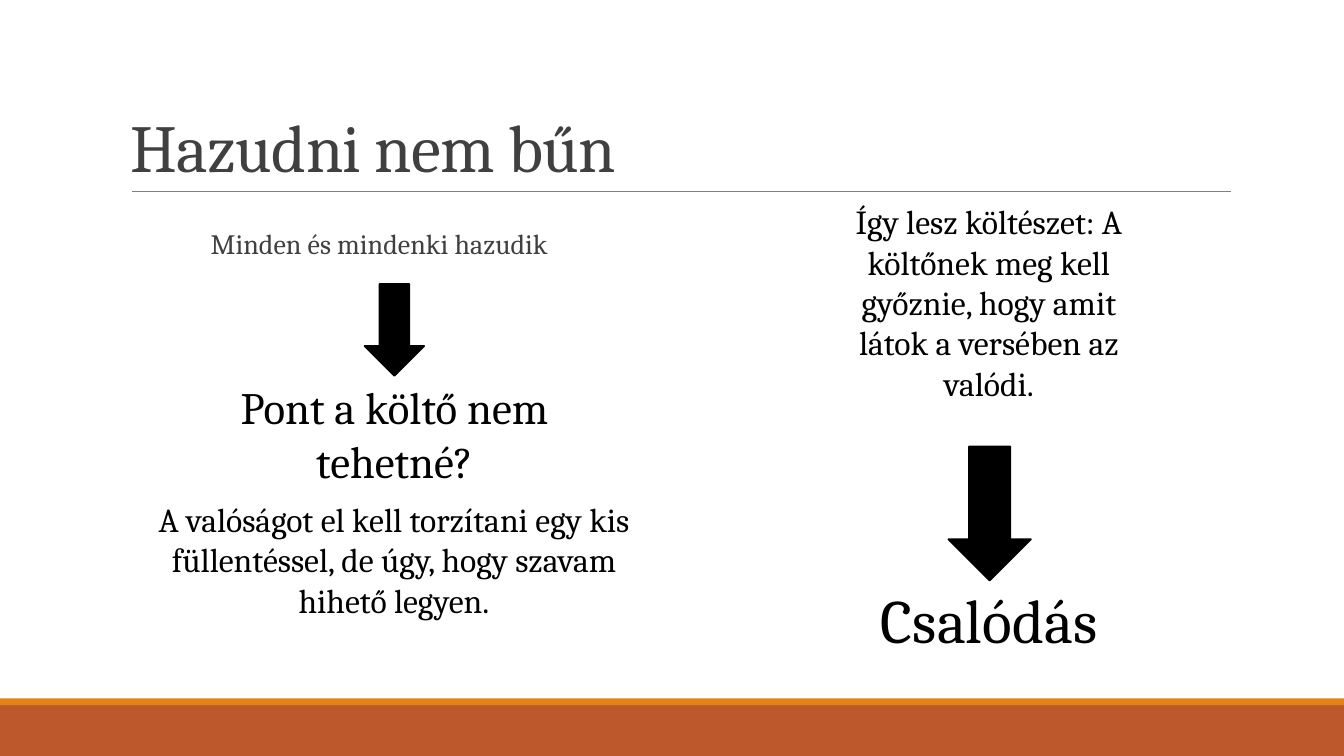
from pptx import Presentation
from pptx.dml.color import RGBColor
from pptx.enum.shapes import MSO_CONNECTOR, MSO_SHAPE
from pptx.enum.text import MSO_ANCHOR, PP_ALIGN
from pptx.util import Cm, Pt
from lxml.etree import SubElement
from pptx.oxml.ns import qn

FONT = "Cambria"
BLACK = "000000"
GRAY = "404040"
SLIDE_WIDTH, SLIDE_HEIGHT = 33.87, 19.05


def color(hex_code):
    return RGBColor.from_string(hex_code)


def add_text(slide, box, text, size, hex_code=BLACK, align=PP_ALIGN.CENTER):
    frame = slide.shapes.add_textbox(*map(Cm, box)).text_frame
    frame.word_wrap = True
    paragraph = frame.paragraphs[0]
    paragraph.text = text
    paragraph.alignment = align
    paragraph.font.name = FONT
    paragraph.font.size = Pt(size)
    paragraph.font.color.rgb = color(hex_code)
    return frame


def add_filled(slide, preset, box, hex_code):
    shape = slide.shapes.add_shape(preset, *map(Cm, box))
    shape.shadow.inherit = False
    shape.fill.solid()
    shape.fill.fore_color.rgb = color(hex_code)
    shape.line.fill.background()
    return shape


def add_down_arrow(slide, box):
    arrow = add_filled(slide, MSO_SHAPE.DOWN_ARROW, box, BLACK)
    arrow.line.color.rgb = color(BLACK)
    arrow.line.width = Pt(1.25)


def add_footer(slide, left, top, width, height):
    stripe = 0.17
    add_filled(slide, MSO_SHAPE.RECTANGLE,
               (left, top + stripe, width, height - stripe), "BD582C")
    add_filled(slide, MSO_SHAPE.RECTANGLE, (left, top, width, stripe), "E48312")


def add_title(slide, left, top, width, height):
    # Rule under the title
    rule_left, rule_top = left + 0.28, top + height
    rule = slide.shapes.add_connector(
        MSO_CONNECTOR.STRAIGHT, Cm(rule_left), Cm(rule_top),
        Cm(rule_left + 27.69), Cm(rule_top))
    rule.line.color.rgb = color("808080")
    rule.line.width = Pt(0.5)
    SubElement(rule.line._get_or_add_ln().getparent(), qn("a:effectLst"))

    # Title with slightly tightened letters
    title = add_text(slide, (left, top, width, height), "Hazudni nem bűn",
                     48, GRAY, PP_ALIGN.LEFT)
    title.vertical_anchor = MSO_ANCHOR.BOTTOM
    paragraph = title.paragraphs[0]
    paragraph.line_spacing = 0.85
    paragraph.runs[0]._r.get_or_add_rPr().set("spc", "-50")


def add_lying_column(slide, left, top):
    # Opening claim
    claim = add_text(slide, (left + 1.83, top, 29.21, 12.09),
                     "Minden és mindenki hazudik", 20, GRAY, PP_ALIGN.LEFT)
    claim.margin_left = claim.margin_right = 0
    paragraph = claim.paragraphs[0]
    paragraph.line_spacing = 0.9
    paragraph.space_before = Pt(12)
    paragraph.space_after = Pt(2)

    # Question and answer
    add_down_arrow(slide, (left + 5.71, top + 1.47, 1.5, 2.31))
    add_text(slide, (left + 0.46, top + 3.76, 12.01, 3),
             "Pont a költő nem tehetné?", 32)
    add_text(slide, (left, top + 6.76, 12.9, 3.33),
             "A valóságot el kell torzítani egy kis füllentéssel, "
             "de úgy, hogy szavam hihető legyen.", 24)


def add_poetry_column(slide, left, top):
    add_text(slide, (left + 1.02, top, 7.52, 6.4),
             "Így lesz költészet: A költőnek meg kell győznie, "
             "hogy amit látok a versében az valódi.", 24)
    add_down_arrow(slide, (left + 3.76, top + 6.3, 2.08, 3.38))
    add_text(slide, (left, top + 9.6, 9.58, 2.13), "Csalódás", 44)


def main():
    presentation = Presentation()
    presentation.slide_width = Cm(SLIDE_WIDTH)
    presentation.slide_height = Cm(SLIDE_HEIGHT)
    slide = presentation.slides.add_slide(presentation.slide_layouts[6])
    add_footer(slide, 0, 17.6, SLIDE_WIDTH, 1.45)
    add_title(slide, 3.05, 0.79, 27.94, 4.04)
    add_lying_column(slide, 3.48, 5.69)
    add_poetry_column(slide, 20.14, 4.95)
    presentation.save("out.pptx")


if __name__ == "__main__":
    main()
